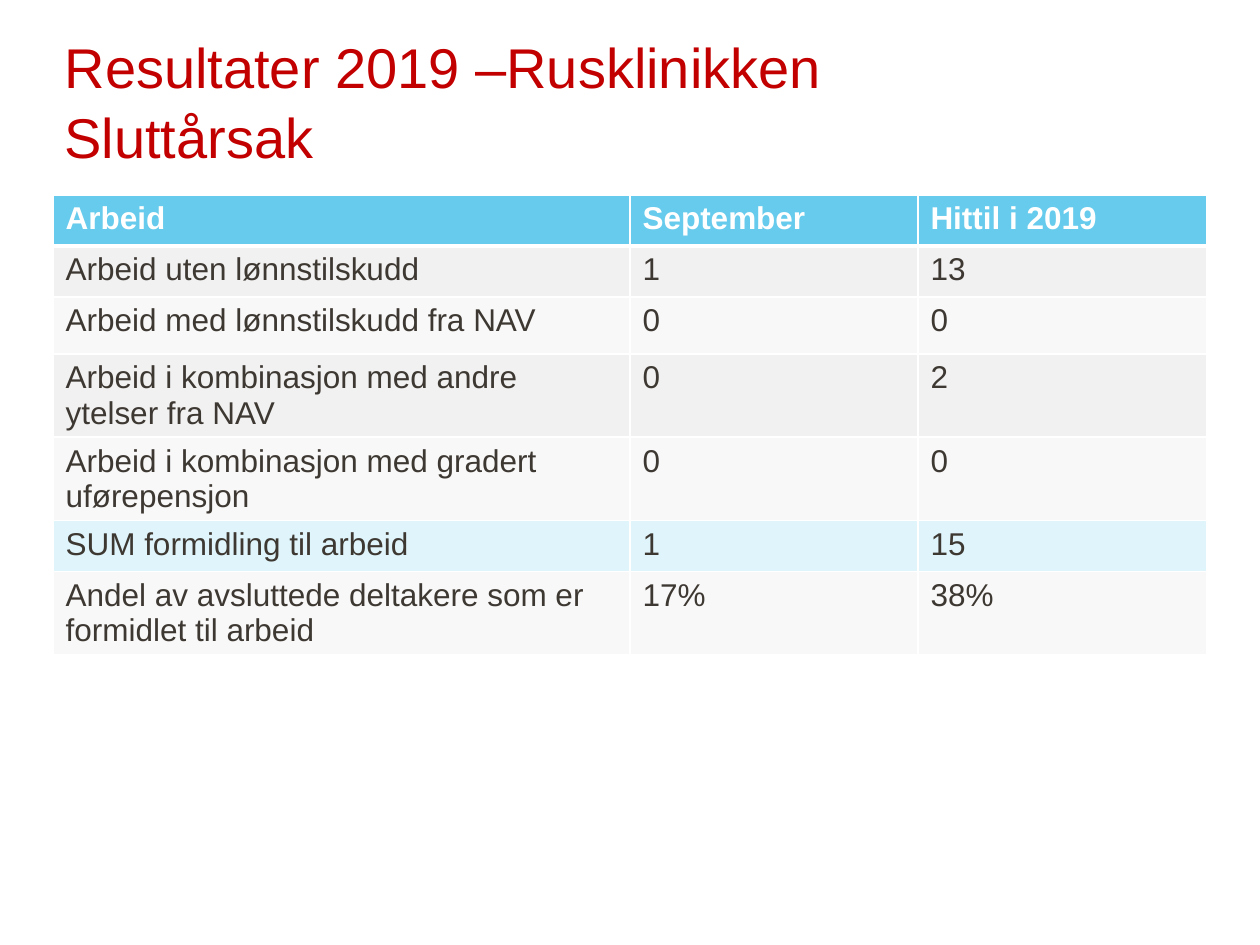
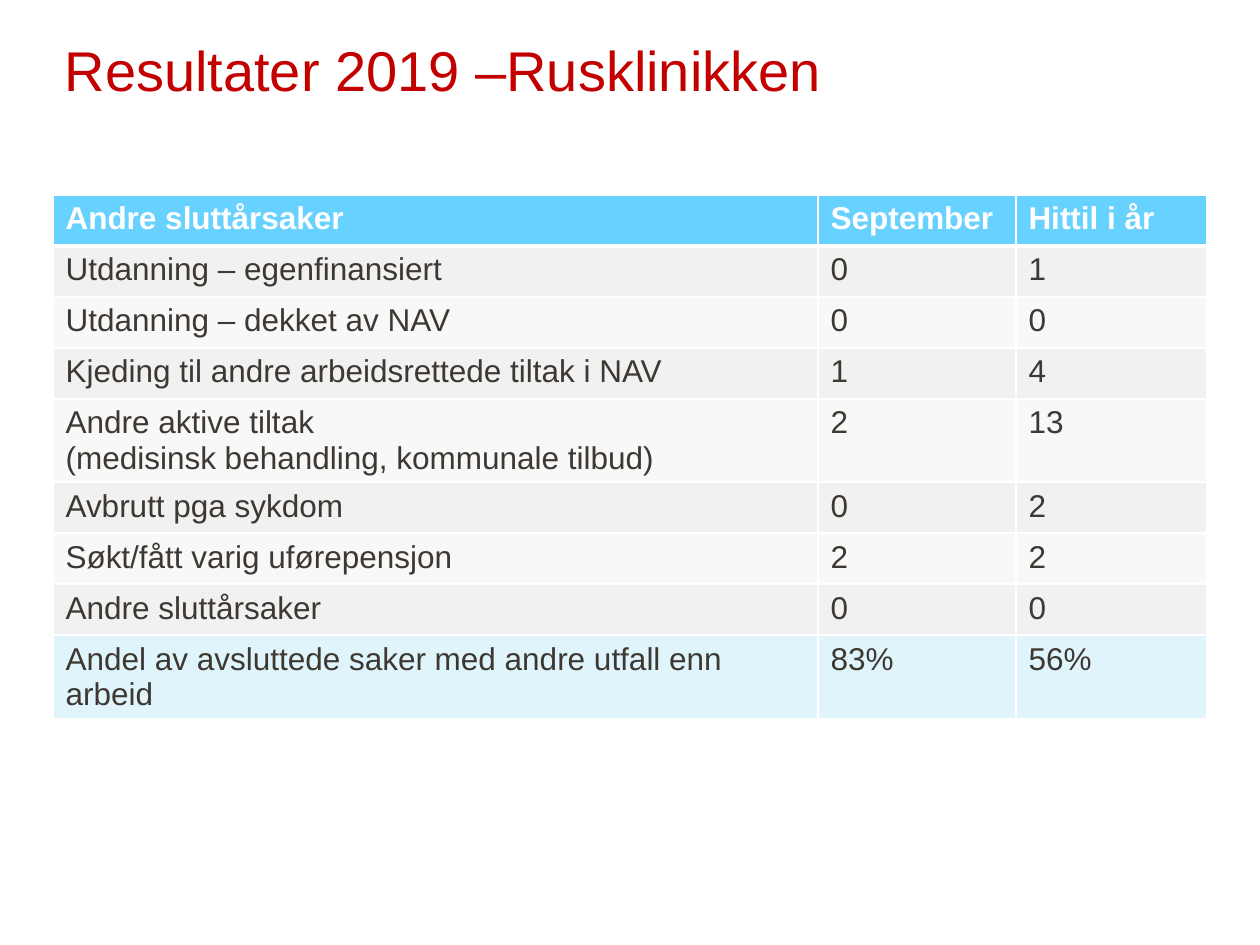
from lxml import etree
from pptx import Presentation
from pptx.dml.color import RGBColor
from pptx.enum.text import MSO_ANCHOR, PP_ALIGN
from pptx.oxml.ns import qn
from pptx.util import Emu, Pt

PX_PER_INCH = 126
FONT = "Arial"
RED = RGBColor(0xC3, 0x00, 0x00)
DARK = RGBColor(0x3E, 0x38, 0x32)
WHITE = RGBColor(0xFF, 0xFF, 0xFF)
TEAL_BLUE = RGBColor(0x66, 0xCB, 0xEC)
SKY_BLUE = RGBColor(0x67, 0xD1, 0xFF)
PALE_BLUE = RGBColor(0xE0, 0xF5, 0xFB)
BANDS = (RGBColor(0xF8, 0xF8, 0xF8), RGBColor(0xF1, 0xF1, 0xF1))

TITLE_LINE = 67
ROW = 51
TWO_LINE_ROW = 83


def px(n):
    return Emu(round(n * 914400 / PX_PER_INCH))


def style_runs(tf, size, color, bold=False):
    for p in tf.paragraphs:
        for r in p.runs:
            r.font.name = FONT
            r.font.size = Pt(size)
            r.font.bold = bold
            r.font.color.rgb = color


def set_border(cell, side, points):
    ln = etree.SubElement(cell._tc.get_or_add_tcPr(), qn(f"a:ln{side}"), w=str(Pt(points)))
    fill = etree.SubElement(ln, qn("a:solidFill"))
    etree.SubElement(fill, qn("a:srgbClr"), val=str(WHITE))


class Deck:
    def __init__(self):
        self.prs = Presentation()
        self.prs.slide_width = px(10 * PX_PER_INCH)
        self.prs.slide_height = px(945)
        self.s = None

    def slide(self, *title_lines):
        self.s = self.prs.slides.add_slide(self.prs.slide_layouts[5])
        self.title(title_lines)

    def title(self, lines):
        """A one-line title keeps the place of the first of two lines."""
        sp = self.s.shapes.title
        sp.left, sp.top, sp.width = px(52), px(26), px(1155)
        sp.height = px(150 - TITLE_LINE * (2 - len(lines)))
        tf = sp.text_frame
        tf.text = "\v".join(lines)
        tf.word_wrap = True
        tf.vertical_anchor = MSO_ANCHOR.BOTTOM
        p = tf.paragraphs[0]
        p.alignment = PP_ALIGN.LEFT
        p.line_spacing = 1.04
        style_runs(tf, 32, RED)

    def table(self, rows, widths, header_fill, sum_row, heights):
        """heights maps a row number to its height where it is not ROW."""
        row_heights = [heights.get(i, ROW) for i in range(len(rows))]
        frame = self.s.shapes.add_table(len(rows), len(widths), px(53), px(195),
                                        px(sum(widths)), px(sum(row_heights)))
        tbl = frame.table
        tbl.horz_banding = False
        for col, width in zip(tbl.columns, widths):
            col.width = px(width)
        for i, (row, values) in enumerate(zip(tbl.rows, rows)):
            row.height = px(row_heights[i])
            fill = {0: header_fill, sum_row: PALE_BLUE}.get(i, BANDS[i % 2])
            for cell, value in zip(row.cells, values):
                self.cell(cell, value, fill, header=i == 0)

    def cell(self, cell, value, fill, header):
        cell.text = value
        style_runs(cell.text_frame, 18, WHITE if header else DARK, bold=header)
        for side, points in (("L", 1), ("R", 1), ("B", 3 if header else 1)):
            set_border(cell, side, points)
        cell.fill.solid()
        cell.fill.fore_color.rgb = fill


WORK = [
    ("Arbeid", "September", "Hittil i 2019"),
    ("Arbeid uten lønnstilskudd", "1", "13"),
    ("Arbeid med lønnstilskudd fra NAV", "0", "0"),
    ("Arbeid i kombinasjon med andre ytelser fra NAV", "0", "2"),
    ("Arbeid i kombinasjon med gradert uførepensjon", "0", "0"),
    ("SUM formidling til arbeid", "1", "15"),
    ("Andel av avsluttede deltakere som er formidlet til arbeid", "17%", "38%"),
]

OTHER_OUTCOMES = [
    ("Andre sluttårsaker", "September", "Hittil i år"),
    ("Utdanning – egenfinansiert", "0", "1"),
    ("Utdanning – dekket av NAV", "0", "0"),
    ("Kjeding til andre arbeidsrettede tiltak i NAV", "1", "4"),
    ("Andre aktive tiltak\n(medisinsk behandling, kommunale tilbud)", "2", "13"),
    ("Avbrutt pga sykdom", "0", "2"),
    ("Søkt/fått varig uførepensjon", "2", "2"),
    ("Andre sluttårsaker", "0", "0"),
    ("Andel av avsluttede saker med andre utfall enn arbeid", "83%", "56%"),
]


def main():
    heading = "Resultater 2019 –Rusklinikken"
    deck = Deck()

    deck.slide(heading, "Sluttårsak")
    deck.table(WORK, (577, 288, 289), TEAL_BLUE, sum_row=5,
               heights={2: 57, 3: TWO_LINE_ROW, 4: TWO_LINE_ROW, 6: TWO_LINE_ROW})

    deck.slide(heading)
    deck.table(OTHER_OUTCOMES, (765, 198, 191), SKY_BLUE, sum_row=8,
               heights={4: TWO_LINE_ROW, 8: TWO_LINE_ROW})

    deck.prs.save("out.pptx")


if __name__ == "__main__":
    main()
